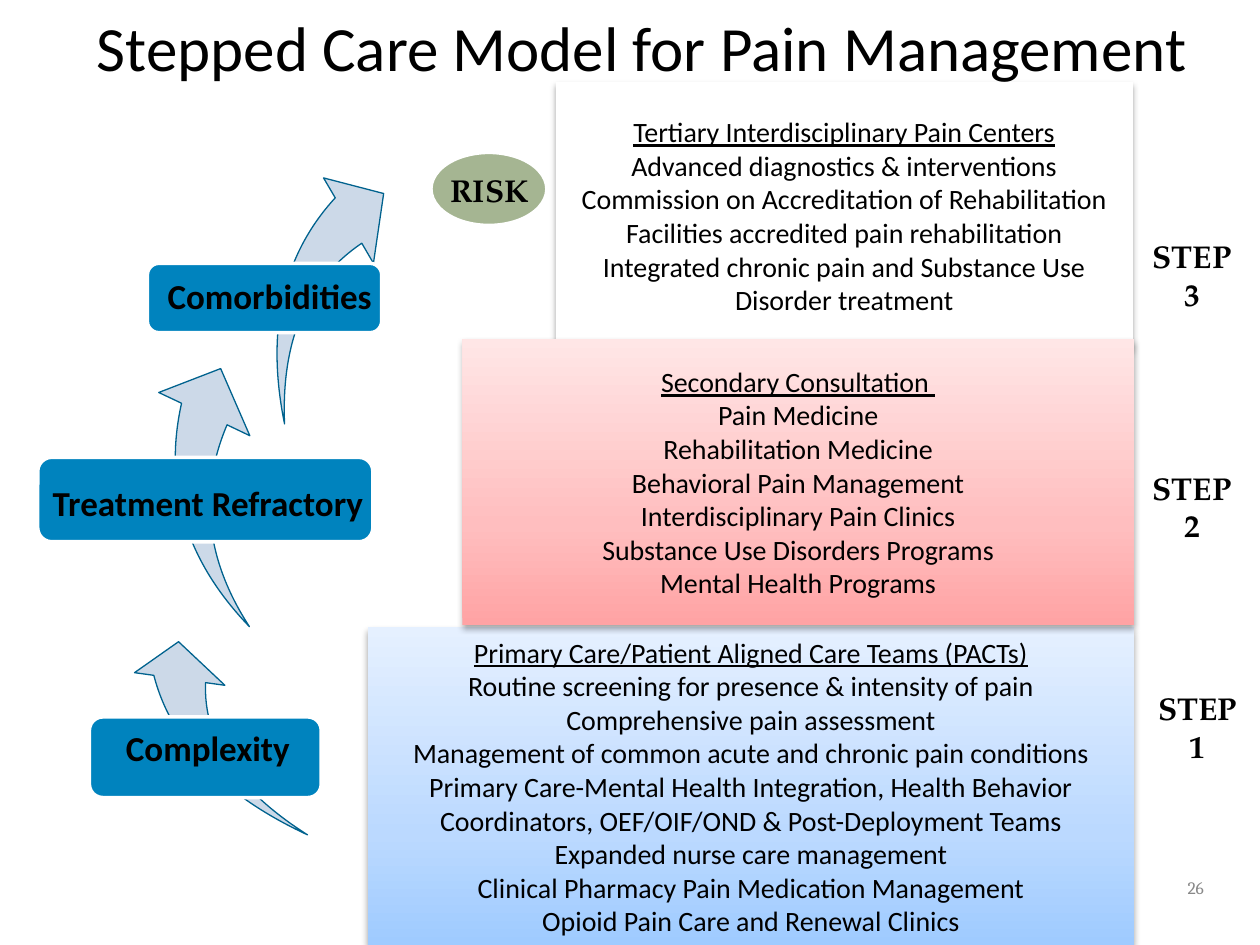
from copy import deepcopy

from lxml.etree import SubElement
from pptx import Presentation
from pptx.dml.color import RGBColor
from pptx.enum.shapes import MSO_SHAPE as Shape
from pptx.enum.text import MSO_ANCHOR as Anchor, MSO_AUTO_SIZE as AutoSize, PP_ALIGN as Align
from pptx.oxml.ns import qn
from pptx.util import Inches, Pt

TITLE = "Stepped Care Model for Pain Management"
SERIF = "TeX Gyre Pagella"
BLACK, WHITE = "000000", "FFFFFF"

# Each level: box, fill colours from bottom to top, lines (the first is the heading)
LEVELS = [
    ((4.41, 0.65, 4.58, 2.12), [WHITE], [
        "Tertiary Interdisciplinary Pain Centers",
        "Advanced diagnostics & interventions",
        "Commission on Accreditation of Rehabilitation Facilities accredited pain rehabilitation",
        "Integrated chronic pain and Substance Use Disorder treatment",
    ]),
    ((2.92, 4.98, 6.08, 2.52), ["9FCBFF", "BBD9FF", "E5F0FF"], [
        "Primary Care/Patient Aligned Care Teams (PACTs)",
        "Routine screening for presence & intensity of pain",
        "Comprehensive pain assessment",
        "Management of common acute and chronic pain conditions",
        "Primary Care-Mental Health Integration, Health Behavior Coordinators, "
        "OEF/OIF/OND & Post-Deployment Teams",
        "Expanded nurse care management",
        "Clinical Pharmacy Pain Medication Management",
        "Opioid Pain Care and Renewal Clinics",
    ]),
    ((3.67, 2.69, 5.33, 2.27), ["FFA3A4", "FFBEBF", "FFE6E6"], [
        "Secondary Consultation ",
        "Pain Medicine",
        "Rehabilitation Medicine",
        "Behavioral Pain Management",
        "Interdisciplinary Pain Clinics",
        "Substance Use Disorders Programs",
        "Mental Health Programs",
    ]),
]
GRADIENT_POSITIONS = (0, 0.35, 1)

STEPS = [
    ("1", (9.01, 5.42, 0.99, 0.77)),
    ("2", (8.92, 3.67, 1.08, 0.77)),
    ("3", (8.92, 1.83, 1.08, 0.77)),
]

# Each factor: label, label box, right inset, plate box, arrow box, arrow rotation
FACTORS = [
    ("Complexity", (0.36, 5.8, 2.72, 0.59), 0.14,
     (0.71, 5.69, 1.84, 0.64), (1.18, 5, 1.23, 1.65), 284.4),
    ("Treatment Refractory", (0.38, 3.86, 2.7, 0.39), 0.16,
     (0.3, 3.63, 2.66, 0.67), (0.92, 3.07, 1.62, 1.59), 301.8),
    ("Comorbidities", (1.29, 2.22, 1.82, 0.66), 0.12,
     (1.17, 2.09, 1.86, 0.55), (1.86, 1.48, 1.46, 1.66), 336.1),
]


def rgb(color):
    return RGBColor.from_string(color)


def inches(box):
    return [Inches(length) for length in box]


def write(frame, lines, size, font="Calibri", color=BLACK, bold=False):
    """Fill a text frame with centred paragraphs in one style."""
    frame.word_wrap = True
    frame.text = "\n".join(lines)
    for paragraph in frame.paragraphs:
        paragraph.alignment = Align.CENTER
        for run in paragraph.runs:
            run.font.size, run.font.name, run.font.bold = Pt(size), font, bold
            run.font.color.rgb = rgb(color)


def add_text(slide, box, lines, size, **style):
    frame = slide.shapes.add_textbox(*inches(box)).text_frame
    write(frame, lines, size, **style)
    return frame


def add_filled(slide, kind, box, fill, line=None, width=2):
    shape = slide.shapes.add_shape(kind, *inches(box))
    shape.shadow.inherit = False
    shape.fill.solid()
    shape.fill.fore_color.rgb = rgb(fill)
    if line:
        shape.line.color.rgb = rgb(line)
        shape.line.width = Pt(width)
    else:
        shape.line.fill.background()
    return shape


def set_gradient(shape, colors):
    """Run three colours from the bottom of the shape to its top."""
    shape.fill.gradient()
    shape.fill.gradient_angle = 90
    stop_list = shape._element.spPr.find(".//" + qn("a:gsLst"))
    stop_list.append(deepcopy(stop_list[0]))
    for stop, color, position in zip(shape.fill.gradient_stops, colors, GRADIENT_POSITIONS):
        stop.color.rgb = rgb(color)
        stop.position = position


def add_shadow(shape):
    effects = shape._element.spPr.find(qn("a:effectLst"))
    shadow = SubElement(effects, qn("a:outerShdw"), blurRad=str(Pt(3.5)), dist=str(Pt(2.2)),
                        dir="5400000", rotWithShape="0")
    color = SubElement(shadow, qn("a:srgbClr"), val=BLACK)
    SubElement(color, qn("a:alpha"), val="32000")


def add_level(slide, box, colors, lines):
    level = add_filled(slide, Shape.FLOWCHART_PROCESS, box, colors[0])
    if len(colors) > 1:
        set_gradient(level, colors)
    add_shadow(level)
    frame = level.text_frame
    frame.vertical_anchor = Anchor.MIDDLE
    write(frame, lines, 16)
    frame.paragraphs[0].runs[0].font.underline = True


def add_factor(slide, label, label_box, right_inset, plate_box, arrow_box, rotation):
    arrow = add_filled(slide, Shape.SWOOSH_ARROW, arrow_box, "CCD9E8", "00628E", 0.75)
    arrow.adjustments[0] = arrow.adjustments[1] = 0.25
    arrow.rotation = rotation
    add_filled(slide, Shape.FLOWCHART_ALTERNATE_PROCESS, plate_box, "0083BE", WHITE)
    frame = add_text(slide, label_box, [label], 20, bold=True)
    frame.margin_left = frame.margin_top = frame.margin_bottom = 0
    frame.margin_right = Inches(right_inset)
    frame.paragraphs[0].line_spacing = 0.9


def add_title(slide):
    title = slide.shapes.title
    title.left, title.top, title.width, title.height = inches((0.38, 0.02, 9.43, 0.77))
    title.fill.solid()
    title.fill.fore_color.rgb = rgb(WHITE)
    write(title.text_frame, [TITLE], 36)
    title.text_frame.auto_size = AutoSize.NONE
    title.text_frame.vertical_anchor = Anchor.TOP


def main():
    deck = Presentation()
    deck.slide_width, deck.slide_height = Inches(10), Inches(7.5)
    slide = deck.slides.add_slide(deck.slide_layouts[5])

    add_title(slide)
    add_filled(slide, Shape.OVAL, (3.42, 1.21, 0.92, 0.58), "A5B592", WHITE)
    for number, box in STEPS:
        add_text(slide, box, ["STEP", number], 18, font=SERIF, bold=True)
    for level in LEVELS:
        add_level(slide, *level)
    for factor in FACTORS:
        add_factor(slide, *factor)
    add_text(slide, (3.4, 1.31, 0.97, 0.4), ["RISK"], 18, font=SERIF, bold=True)
    page = add_text(slide, (9.22, 6.84, 0.54, 0.4), ["26"], 10, font="Cambria", color="898989")
    page.vertical_anchor = Anchor.MIDDLE

    deck.save("out.pptx")


if __name__ == "__main__":
    main()
